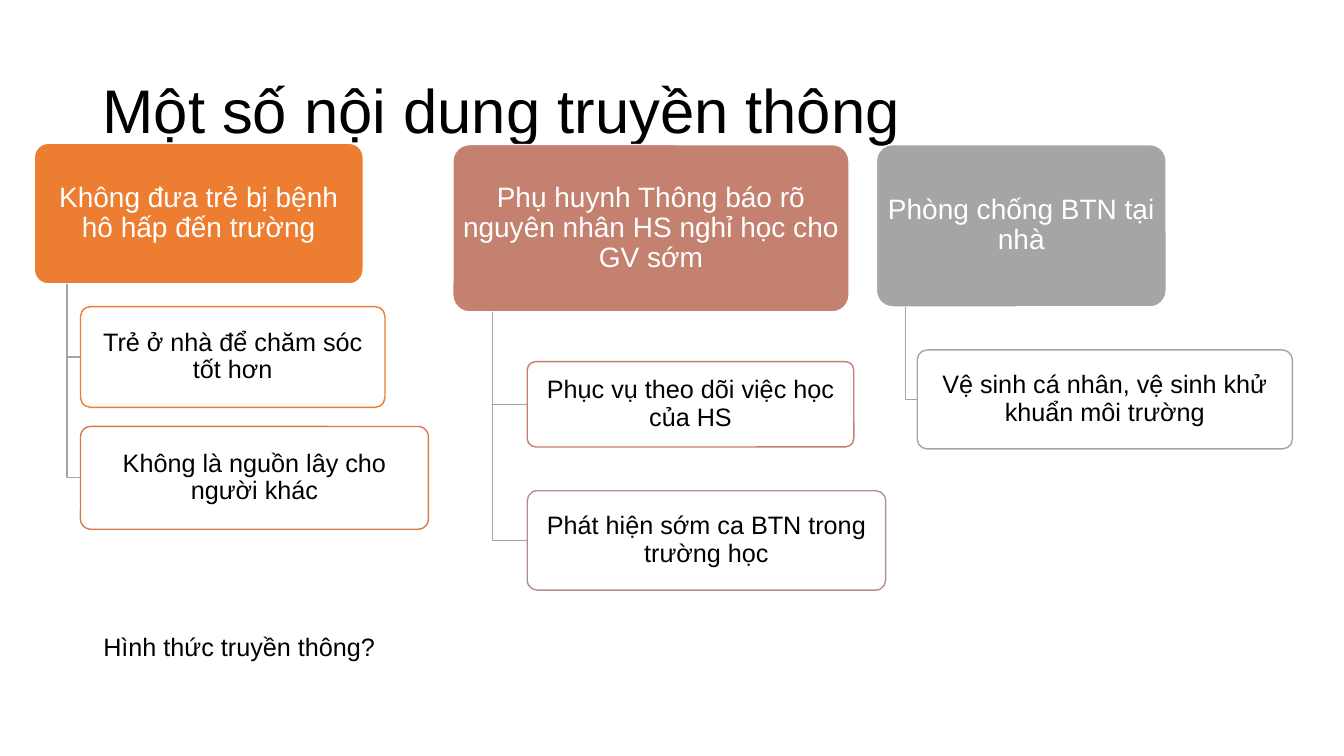
from pptx import Presentation
from pptx.dml.color import RGBColor
from pptx.enum import shapes as sh, text as tx
from pptx.oxml.ns import qn
from pptx.util import Pt
from lxml import etree

FONT = "Arial"
COLORS = {
    "black": "000000", "white": "FFFFFF", "orange": "ED7D31",
    "rust": "D87A51", "clay": "C48170", "mauve": "B4908B", "gray": "A5A5A5",
}

# Each branch: header box, fill, wording, then its topics.
# Boxes are left, top, width, height in points.
BRANCHES = [
    ((24.5, 102.3, 235, 100.5), "orange", "Không đưa trẻ bị bệnh hô hấp đến trường", [
        ((57.5, 219, 217.5, 72), "orange", "Trẻ ở nhà để chăm sóc tốt hơn"),
        ((57.5, 304.6, 248.5, 73.4), "rust", "Không là nguồn lây cho người khác"),
    ]),
    ((323.5, 103.3, 283, 119.5), "clay",
     "Phụ huynh Thông báo rõ nguyên nhân HS nghỉ học cho GV sớm", [
         ((376.6, 258.3, 233.3, 61), "clay", "Phục vụ theo dõi việc học của HS"),
         ((376.6, 350.5, 256, 71), "mauve", "Phát hiện sớm ca BTN trong trường học"),
     ]),
    ((626, 103.3, 207, 116), "gray", "Phòng chống BTN tại nhà", [
        ((655.2, 250, 268, 70.7), "gray", "Vệ sinh cá nhân, vệ sinh khử khuẩn môi trường"),
    ]),
]


def rgb(name):
    return RGBColor.from_string(COLORS[name])


def write(frame, wording, size, color, align, spacing=None):
    frame.text = wording
    paragraph = frame.paragraphs[0]
    paragraph.alignment = align
    paragraph.line_spacing = spacing
    font = paragraph.runs[0].font
    font.name, font.size = FONT, Pt(size)
    font.color.rgb = rgb(color)


def set_margins(frame, side, end):
    frame.margin_left = frame.margin_right = Pt(side)
    frame.margin_top = frame.margin_bottom = Pt(end)


def add_title(slide, box, wording):
    title = slide.shapes.title
    title.left, title.top, title.width, title.height = map(Pt, box)
    frame = title.text_frame
    frame.auto_size = tx.MSO_AUTO_SIZE.NONE
    frame.vertical_anchor = tx.MSO_ANCHOR.MIDDLE
    write(frame, wording, 44, "black", tx.PP_ALIGN.LEFT, 0.9)


def add_card(slide, box, fill, outline, wording, size, color, opacity=100):
    card = slide.shapes.add_shape(sh.MSO_SHAPE.ROUNDED_RECTANGLE, *map(Pt, box))
    card.adjustments[0] = 0.1
    card.shadow.inherit = False
    card.fill.solid()
    card.fill.fore_color.rgb = rgb(fill)
    if opacity < 100:
        tint = card.fill._xPr.find(qn("a:solidFill"))[0]
        etree.SubElement(tint, qn("a:alpha")).set("val", str(opacity * 1000))
    card.line.color.rgb = rgb(outline)
    card.line.width = Pt(1)
    frame = card.text_frame
    frame.word_wrap = True
    frame.vertical_anchor = tx.MSO_ANCHOR.MIDDLE
    set_margins(frame, 3, 2)
    write(frame, wording, size, color, tx.PP_ALIGN.CENTER, 0.9)


def add_elbow(slide, header_box, topic_box):
    """Run down from the header, a tenth of the way in, then across to the topic."""
    left, top, width, height = header_box
    stem = Pt(left + width / 10)
    middle = Pt(topic_box[1] + topic_box[3] / 2)
    builder = slide.shapes.build_freeform(stem, Pt(top + height))
    builder.add_line_segments([(stem, middle), (Pt(topic_box[0]), middle)], close=False)
    elbow = builder.convert_to_shape()
    elbow.shadow.inherit = False
    elbow.fill.background()
    elbow.line.color.rgb = rgb("gray")
    elbow.line.width = Pt(1)


def add_branch(slide, box, color, wording, topics):
    add_card(slide, box, color, "white", wording, 20, "white")
    for topic_box, outline, topic in topics:
        add_elbow(slide, box, topic_box)
        add_card(slide, topic_box, "white", outline, topic, 18, "black", opacity=90)


def add_question(slide, box, wording):
    question = slide.shapes.add_textbox(*map(Pt, box))
    frame = question.text_frame
    frame.word_wrap = False
    frame.auto_size = tx.MSO_AUTO_SIZE.SHAPE_TO_FIT_TEXT
    set_margins(frame, 9.5, 5)
    write(frame, wording, 18, "black", tx.PP_ALIGN.LEFT)


def main():
    deck = Presentation()
    deck.slide_width, deck.slide_height = Pt(960), Pt(540)
    slide = deck.slides.add_slide(deck.slide_layouts[5])
    add_title(slide, (66, 28.8, 828, 104.4), "Một số nội dung truyền thông")
    for branch in BRANCHES:
        add_branch(slide, *branch)
    add_question(slide, (64.3, 445.7, 215, 31.7), "Hình thức truyền thông?")
    deck.save("out.pptx")


if __name__ == "__main__":
    main()
